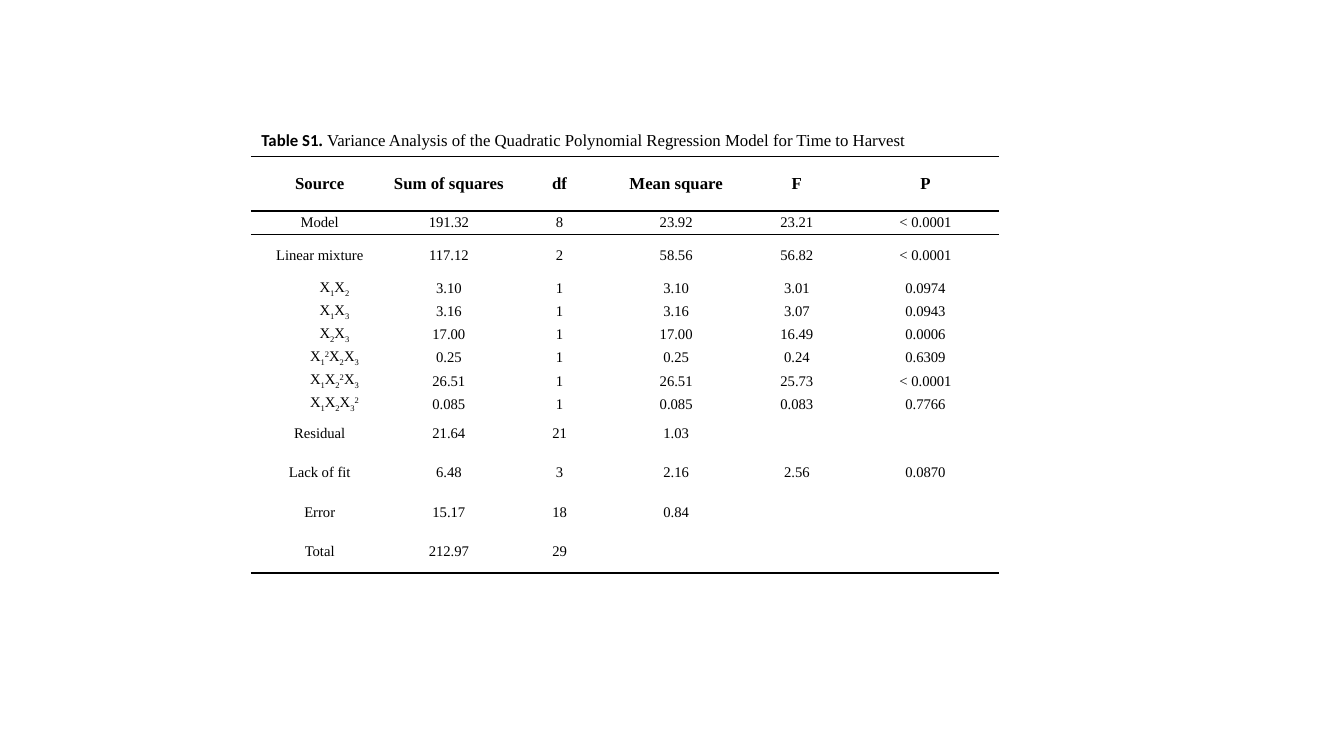
from lxml import etree
from pptx import Presentation
from pptx.dml.color import RGBColor
from pptx.enum.text import MSO_ANCHOR, MSO_AUTO_SIZE, PP_ALIGN
from pptx.oxml.ns import qn
from pptx.util import Pt

PX = 9525  # EMU per px, 96 px to the inch
BLACK = RGBColor(0, 0, 0)
SERIF, SANS = "Times New Roman", "Calibri"
CENTER, JUSTIFY = PP_ALIGN.CENTER, PP_ALIGN.JUSTIFY
MIDDLE, FIXED = MSO_ANCHOR.MIDDLE, MSO_AUTO_SIZE.NONE
NO_STYLE_NO_GRID = "{2D5ABB26-0587-4C30-8999-92F81FD0307C}"

COLUMN_WIDTHS = [131, 115, 96, 126, 104, 141]
FORMULA_INDENT = 28
CELL_INSET = 1
# In formulas, _ lowers and ^ raises the next character
BASELINES = {"_": "-25000", "^": "30000"}

# Row height, then the cells of the row
ANOVA = [
    (52, ["Source", "Sum of squares", "df", "Mean square", "F", "P"]),
    (22, ["Model", "191.32", "8", "23.92", "23.21", "< 0.0001"]),
    (41, ["Linear mixture", "117.12", "2", "58.56", "56.82", "< 0.0001"]),
    (22, ["X_1X_2", "3.10", "1", "3.10", "3.01", "0.0974"]),
    (22, ["X_1X_3", "3.16", "1", "3.16", "3.07", "0.0943"]),
    (22, ["X_2X_3", "17.00", "1", "17.00", "16.49", "0.0006"]),
    (22, ["X_1^2X_2X_3", "0.25", "1", "0.25", "0.24", "0.6309"]),
    (22, ["X_1X_2^2X_3", "26.51", "1", "26.51", "25.73", "< 0.0001"]),
    (22, ["X_1X_2X_3^2", "0.085", "1", "0.085", "0.083", "0.7766"]),
    (34, ["Residual", "21.64", "21", "1.03", "", ""]),
    (41, ["Lack of fit", "6.48", "3", "2.16", "2.56", "0.0870"]),
    (34, ["Error", "15.17", "18", "0.84", "", ""]),
    (41, ["Total", "212.97", "29", "", "", ""]),
]


def set_font(font, size, bold, name=SERIF):
    font.name, font.size, font.bold = name, Pt(size), bold
    font.color.rgb = BLACK


def set_insets(target, x, y):
    target.margin_left = target.margin_right = x * PX
    target.margin_top = target.margin_bottom = y * PX


def add_caption(slide, left, top, width, height):
    caption = slide.shapes.title
    caption.left, caption.top = left * PX, top * PX
    caption.width, caption.height = width * PX, height * PX
    frame = caption.text_frame
    frame.word_wrap, frame.auto_size = True, FIXED
    frame.vertical_anchor = MIDDLE
    set_insets(frame, 10, 5)
    paragraph = frame.paragraphs[0]
    paragraph.alignment = JUSTIFY
    for text, name, bold in [
        ("Table S1", SANS, True),
        (". ", SERIF, True),
        ("Variance Analysis of the Quadratic Polynomial Regression Model "
         "for Time to Harvest", SERIF, False),
    ]:
        run = paragraph.add_run()
        run.text = text
        set_font(run.font, 12, bold, name)


def add_rule(cell, side, position):
    """Draw a 1 pt black border; borders come before the fill in the cell."""
    line = etree.Element(qn(f"a:ln{side}"), w=str(Pt(1)))
    fill = etree.SubElement(line, qn("a:solidFill"))
    etree.SubElement(fill, qn("a:srgbClr"), val=str(BLACK))
    cell._tc.get_or_add_tcPr().insert(position, line)


def write_formula(paragraph, formula):
    baseline = None
    for mark in formula:
        if mark in BASELINES:
            baseline = BASELINES[mark]
            continue
        run = paragraph.add_run()
        run.text = mark
        if baseline:
            run._r.get_or_add_rPr().set("baseline", baseline)
        baseline = None
    paragraph._p.get_or_add_pPr().set("indent", str(FORMULA_INDENT * PX))


def fill_cell(cell, text, is_header):
    cell.fill.background()
    cell.vertical_anchor = MIDDLE
    set_insets(cell, CELL_INSET, CELL_INSET)
    paragraph = cell.text_frame.paragraphs[0]
    paragraph.alignment = CENTER
    set_font(paragraph.font, 12 if is_header else 10.5, is_header)
    if "_" in text:
        write_formula(paragraph, text)
    elif text:
        paragraph.add_run().text = text


def add_anova_table(slide, left, top):
    heights = [height for height, _ in ANOVA]
    frame = slide.shapes.add_table(
        len(ANOVA), len(COLUMN_WIDTHS), left * PX, top * PX,
        sum(COLUMN_WIDTHS) * PX, sum(heights) * PX)
    table = frame.table
    table.horz_banding = False
    table._tbl.tblPr.find(qn("a:tableStyleId")).text = NO_STYLE_NO_GRID
    for column, width in zip(table.columns, COLUMN_WIDTHS):
        column.width = width * PX

    last = len(ANOVA) - 1
    for r, (height, texts) in enumerate(ANOVA):
        table.rows[r].height = height * PX
        # Rules above and below the header, and under the last row
        sides = [side for side, rows in (("T", (0, 1)), ("B", (0, last)))
                 if r in rows]
        for c, text in enumerate(texts):
            cell = table.cell(r, c)
            fill_cell(cell, text, r == 0)
            for position, side in enumerate(sides):
                add_rule(cell, side, position)


def main():
    prs = Presentation()
    prs.slide_width, prs.slide_height = 1280 * PX, 720 * PX
    slide = prs.slides.add_slide(prs.slide_layouts[5])
    add_caption(slide, 239, 119, 884, 29)
    add_anova_table(slide, 239, 149)
    prs.save("out.pptx")


if __name__ == "__main__":
    main()
